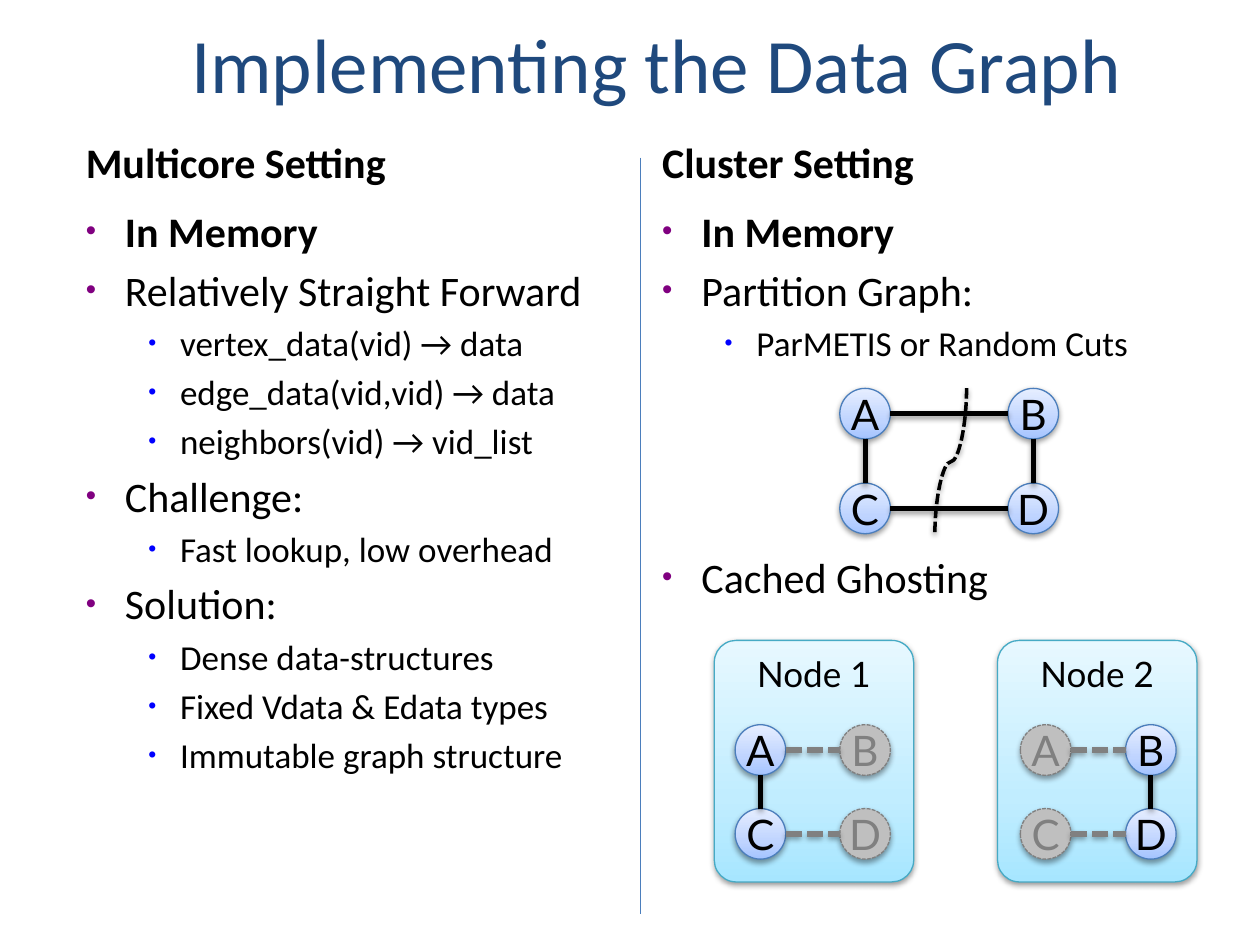
"""Build the slide "Implementing the Data Graph"."""
from copy import deepcopy

from pptx import Presentation
from pptx.dml.color import RGBColor
from pptx.enum.dml import MSO_LINE
from pptx.enum.shapes import MSO_CONNECTOR, MSO_SHAPE
from pptx.enum.text import MSO_ANCHOR, MSO_AUTO_SIZE, PP_ALIGN
from pptx.oxml import parse_xml
from pptx.oxml.ns import nsdecls, qn
from pptx.util import Cm, Pt

STRAIGHT, CURVE = MSO_CONNECTOR.STRAIGHT, MSO_CONNECTOR.CURVE
OVAL, CARD = MSO_SHAPE.OVAL, MSO_SHAPE.ROUNDED_RECTANGLE
TOP, MIDDLE, BOTTOM = MSO_ANCHOR.TOP, MSO_ANCHOR.MIDDLE, MSO_ANCHOR.BOTTOM
LEFT, CENTER = PP_ALIGN.LEFT, PP_ALIGN.CENTER
DASH = MSO_LINE.SQUARE_DOT

COLORS = {
    "title": "1F497D", "text": "000000", "ghost": "808080", "ghost_fill": "BFBFBF",
    "bullet0": "800080", "bullet1": "0000FF", "node_line": "4B7EBC", "card_line": "46AAC5",
}
GRADIENTS = {"node": ["A4C4FF", "BFD4FF", "E6EEFF"], "card": ["A7E6FF", "C1EDFF", "E7F8FF"]}
EFFECTS = f'<a:effectLst {nsdecls("a")}>%s</a:effectLst>'
SHADOW = EFFECTS % (
    '<a:outerShdw blurRad="40000" dist="20000" dir="5400000" rotWithShape="0">'
    '<a:srgbClr val="000000"><a:alpha val="38000"/></a:srgbClr></a:outerShdw>')
MARGINS = [(0.79, 0.79), (1.9, 0.64)]
BULLET_SIZES = [70000, 65000]


def add_text(tf, text, size=24, font="Calibri", color="text", bold=False,
             align=LEFT, level=None, before=0):
    p = tf.paragraphs[0] if not tf.text else tf.add_paragraph()
    if level is not None:
        margin, hang = MARGINS[level]
        pPr = p._p.get_or_add_pPr()
        pPr.set("marL", str(Cm(margin)))
        pPr.set("indent", str(-Cm(hang)))
        p.level = level
        for xml in (f'<a:buClr %s><a:srgbClr val="{COLORS[f"bullet{level}"]}"/></a:buClr>',
                    f'<a:buSzPct %s val="{BULLET_SIZES[level]}"/>',
                    '<a:buFont %s typeface="Arial"/>', '<a:buChar %s char="•"/>'):
            pPr.append(parse_xml(xml % nsdecls("a")))
    p.alignment = align
    if before:
        p.space_before = Pt(before)
    r = p.add_run()
    r.text = text
    r.font.size, r.font.name, r.font.bold = Pt(size), font, bold
    r.font.color.rgb = RGBColor.from_string(COLORS[color])


def add_line(x1, y1, x2, y2, kind=STRAIGHT, color="text", width=3, dash=None, effects=SHADOW):
    line = s.shapes.add_connector(kind, Cm(x1), Cm(y1), Cm(x2), Cm(y2))
    line.line.color.rgb = RGBColor.from_string(COLORS[color])
    line.line.width = Pt(width)
    if dash:
        line.line.dash_style = dash
    line._element.spPr.append(parse_xml(effects))
    return line


prs = Presentation()
prs.slide_width, prs.slide_height = Cm(25.4), Cm(19.05)
s = prs.slides.add_slide(prs.slide_layouts[5])

title = s.shapes.title
title.left, title.top, title.width, title.height = Cm(3.6), Cm(0.2), Cm(20.53), Cm(2.12)
title.text_frame.auto_size = MSO_AUTO_SIZE.NONE
title.text_frame.vertical_anchor = BOTTOM
add_text(title.text_frame, "Implementing the Data Graph", size=44, color="title")

columns = [
    (1.48, "Multicore Setting", [
        (0, "In Memory"), (0, "Relatively Straight Forward"),
        (1, "vertex_data(vid) → data"), (1, "edge_data(vid,vid) → data"),
        (1, "neighbors(vid) → vid_list"),
        (0, "Challenge:"), (1, "Fast lookup, low overhead"),
        (0, "Solution:"), (1, "Dense data-structures"),
        (1, "Fixed Vdata & Edata types"), (1, "Immutable graph structure")]),
    (13.1, "Cluster Setting", [
        (0, "In Memory"), (0, "Partition Graph:"), (1, "ParMETIS or Random Cuts"),
        (0, "Cached Ghosting")]),
]
for x, heading, items in columns:
    head = s.shapes.add_textbox(Cm(x), Cm(2.12), Cm(11.22), Cm(1.78)).text_frame
    body = s.shapes.add_textbox(Cm(x), Cm(4.02), Cm(11.22), Cm(11.85)).text_frame
    head.word_wrap = body.word_wrap = True
    head.vertical_anchor = BOTTOM
    add_text(head, heading, bold=True)
    for i, (level, text) in enumerate(items):
        size = 20 if level else 24
        before = 107 if text == "Cached Ghosting" else 0.2 * size if i else 0
        add_text(body, text, size=size, bold=i == 0, level=level, before=before)

add_line(12.91, 3.18, 12.91, 18.42, color="node_line", width=0.75, effects=EFFECTS % "")

D = 1.02
graphs = [
    ((16.93, 20.32), (7.83, 9.74), ""),
    ((14.82, 16.93), (14.61, 16.3), "BD"),
    ((20.57, 22.69), (14.61, 16.3), "AC"),
]
shapes = [("card", "Node 1", 14.4, 12.91, 4.02, 4.87),
          ("card", "Node 2", 20.11, 12.91, 4.02, 4.87)]
for xs, ys, ghosts in graphs:
    for row, y in zip(("AB", "CD"), ys):
        for name, x in zip(row, xs):
            shapes.append(("ghost" if name in ghosts else "node", name, x, y, D, D))

for style, text, x, y, w, h in shapes:
    is_card, is_ghost = style == "card", style == "ghost"
    sp = s.shapes.add_shape(CARD if is_card else OVAL, Cm(x), Cm(y), Cm(w), Cm(h))
    if is_card:
        sp.adjustments[0] = 0.11
    if is_ghost:
        sp.fill.solid()
        sp.fill.fore_color.rgb = RGBColor.from_string(COLORS["ghost_fill"])
        sp.line.dash_style = DASH
    else:
        sp.fill.gradient()
        sp.fill.gradient_angle = 90
        stops = next(sp._element.spPr.iter(qn("a:gsLst")))
        stops.insert(1, deepcopy(stops[0]))
        for stop, position, color in zip(sp.fill.gradient_stops, (0, 0.35, 1), GRADIENTS[style]):
            stop.position = position
            stop.color.rgb = RGBColor.from_string(color)
    sp.line.color.rgb = RGBColor.from_string(COLORS["ghost" if is_ghost else f"{style}_line"])
    sp.line.width = Pt(0.75)
    sp._element.spPr.append(parse_xml(SHADOW))
    tf = sp.text_frame
    tf.word_wrap = False
    tf.vertical_anchor = TOP if is_card else MIDDLE
    add_text(tf, text, size=20 if is_card else 24, font="Lato",
             color="ghost" if is_ghost else "text", align=CENTER)

for xs, ys, ghosts in graphs:
    for y in ys:
        add_line(xs[0] + D, y + D / 2, xs[1], y + D / 2,
                 color="ghost" if ghosts else "text", dash=DASH if ghosts else None)
    for name, x in zip("AB", xs):
        if name not in ghosts:
            add_line(x + D / 2, ys[1], x + D / 2, ys[0] + D)

cut = add_line(17.68, 8.99, 20.65, 9.63, kind=CURVE, width=2, dash=DASH)
cut._element.spPr.find(qn("a:xfrm")).set("rot", "5400000")

prs.save("out.pptx")
